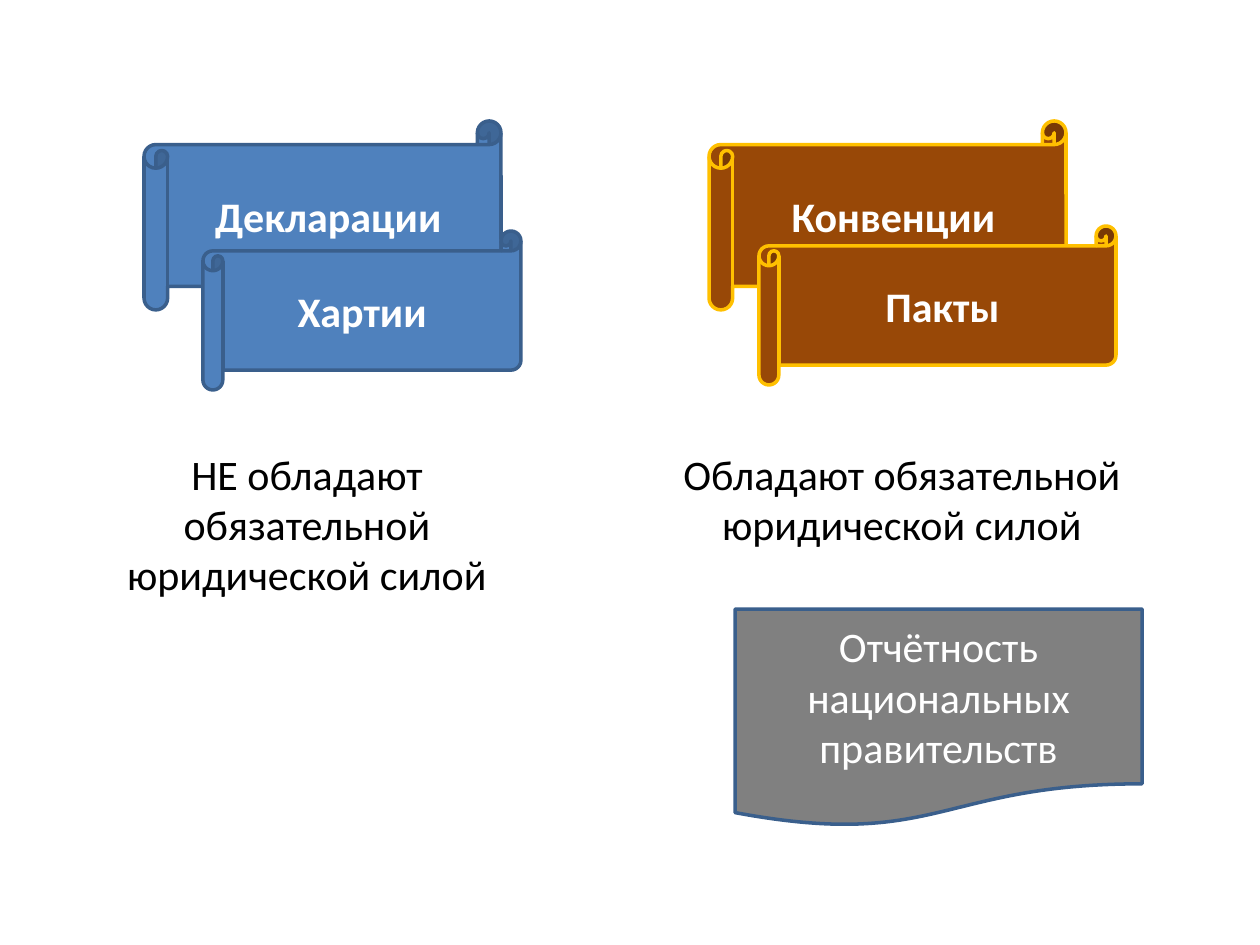
import pptx
import pptx.util
import pptx.dml.color
import pptx.enum.shapes
import pptx.enum.text

PX = 914400 / 126
HUES = {"blue": "4F81BD", "navy": "3A5F8C", "brown": "984807", "gold": "FFC000",
        "gray": "808080", "white": "FFFFFF", "black": "000000"}
KINDS = pptx.enum.shapes.MSO_SHAPE


def hue(name):
    return pptx.dml.color.RGBColor.from_string(HUES[name])


def label(shape, text, color, bold=False):
    frame = shape.text_frame
    frame.word_wrap = True
    para = frame.paragraphs[0]
    para.alignment = pptx.enum.text.PP_ALIGN.CENTER
    run = para.add_run()
    run.text = text
    run.font.name = "Calibri"
    run.font.size = pptx.util.Pt(24)
    run.font.bold = bold
    run.font.color.rgb = hue(color)


deck = pptx.Presentation()
deck.slide_width = round(1260 * PX)
deck.slide_height = round(945 * PX)
slide = deck.slides.add_slide(deck.slide_layouts[6])

# Captions under the scrolls
for text, left, high in [
    ("НЕ обладают обязательной юридической силой", 74, 165),
    ("Обладают обязательной юридической силой", 669, 115),
]:
    box = slide.shapes.add_textbox(*[round(n * PX) for n in (left, 442, 466, high)])
    label(box, text, "black")

# Two grouped pairs of scrolls, then the report sheet
pair_a = slide.shapes.add_group_shape().shapes
pair_b = slide.shapes.add_group_shape().shapes
scroll = KINDS.HORIZONTAL_SCROLL
sheet = KINDS.FLOWCHART_DOCUMENT
for home, kind, text, place, fill, edge, bold in [
    (pair_a, scroll, "Декларации", (144, 121, 357, 189), "blue", "navy", True),
    (pair_a, scroll, "Хартии ", (203, 231, 318, 159), "blue", "navy", True),
    (pair_b, scroll, "Конвенции", (709, 121, 357, 189), "brown", "gold", True),
    (pair_b, scroll, "Пакты", (759, 226, 357, 159), "brown", "gold", True),
    (slide.shapes, sheet, "Отчётность национальных правительств",
     (735, 609, 407, 218), "gray", "navy", False),
]:
    shape = home.add_shape(kind, *[round(n * PX) for n in place])
    shape.shadow.inherit = False
    shape.fill.solid()
    shape.fill.fore_color.rgb = hue(fill)
    shape.line.color.rgb = hue(edge)
    shape.line.width = pptx.util.Pt(2)
    shape.text_frame.vertical_anchor = pptx.enum.text.MSO_ANCHOR.MIDDLE
    label(shape, text, "white", bold)

deck.save("out.pptx")
